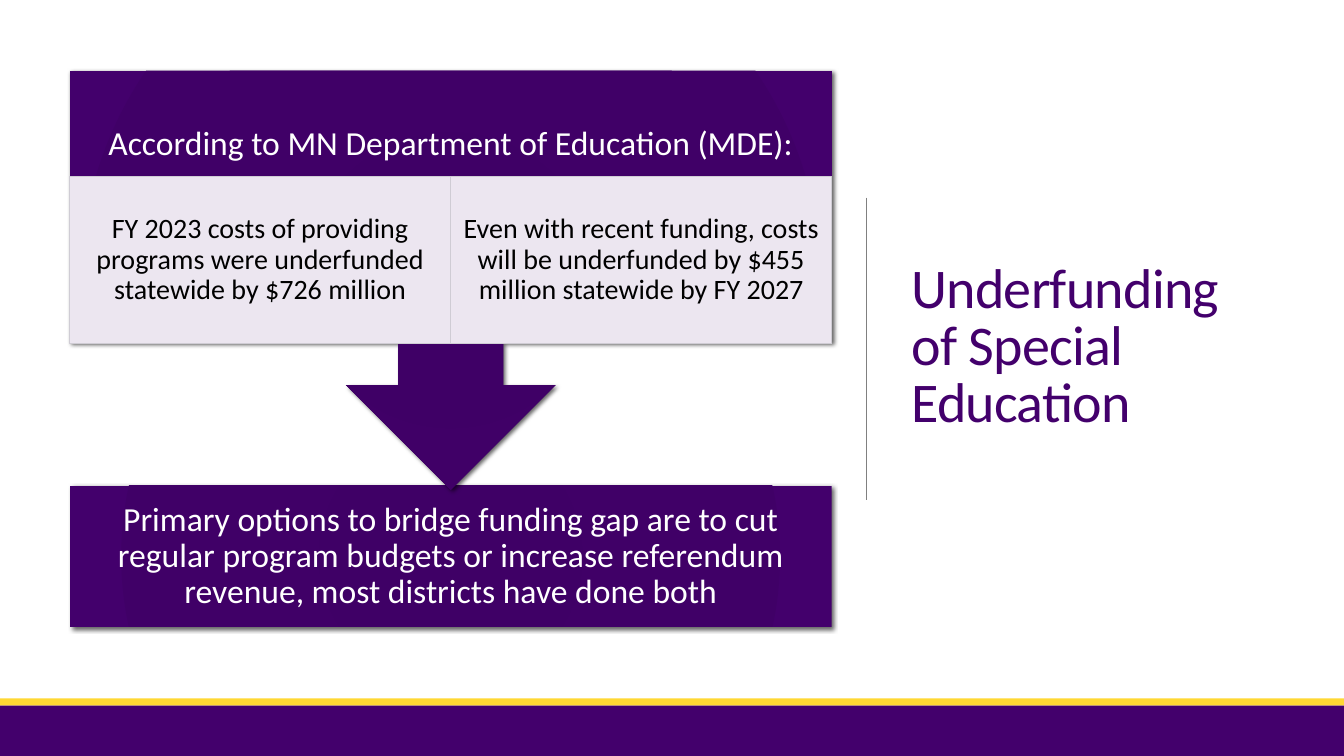
from dataclasses import dataclass

from pptx import Presentation
from pptx.dml.color import RGBColor
from pptx.enum.shapes import MSO_CONNECTOR as Connector, MSO_SHAPE as Preset
from pptx.enum.text import MSO_ANCHOR as Anchor, PP_ALIGN as Align
from pptx.oxml import parse_xml
from pptx.oxml.ns import nsdecls, qn
from pptx.util import Inches, Pt


@dataclass(frozen=True)
class Theme:
    font: str = "Calibri"
    purple: str = "43006C"
    gold: str = "FFD833"
    white: str = "FFFFFF"
    black: str = "000000"
    rule: str = "808080"
    panel_line: str = "CFCCD4"
    shades: tuple = ((0, "3E0065"), (34, "3F0066"), (70, "400067"), (100, "43006C"))
    title_size: int = 40
    heading_size: int = 24
    detail_size: int = 20


THEME = Theme()


def colour(code):
    return RGBColor.from_string(code)


def add_block(page, box, fill, preset=Preset.RECTANGLE):
    block = page.shapes.add_shape(preset, *map(Inches, box))
    block.shadow.inherit = False
    block.fill.solid()
    block.fill.fore_color.rgb = colour(fill)
    block.line.fill.background()
    return block


def add_shaded_block(page, box, preset=Preset.RECTANGLE):
    block = add_block(page, box, THEME.purple, preset)
    properties = block.element.spPr
    stops = "".join(
        f'<a:gs pos="{place * 1000}"><a:srgbClr val="{code}"/></a:gs>'
        for place, code in THEME.shades
    )
    gradient = parse_xml(
        f'<a:gradFill {nsdecls("a")}><a:gsLst>{stops}</a:gsLst><a:path path="circle">'
        '<a:fillToRect l="100000" t="100000" r="100000" b="100000"/></a:path></a:gradFill>'
    )
    properties.replace(properties.find(qn("a:solidFill")), gradient)
    shadow = parse_xml(
        f'<a:outerShdw {nsdecls("a")} blurRad="{Pt(3)}" dist="{Pt(2)}" dir="2700000" '
        f'rotWithShape="0"><a:srgbClr val="{THEME.black}"><a:alpha val="60000"/>'
        "</a:srgbClr></a:outerShdw>"
    )
    properties.find(qn("a:effectLst")).append(shadow)
    return block


def write(shape, text, *, size, color, align=Align.CENTER, spacing=0.9,
          inset=(0.1, 0.05), tracking=None):
    frame = shape.text_frame
    frame.word_wrap = True
    frame.vertical_anchor = Anchor.MIDDLE
    frame.margin_left = frame.margin_right = Inches(inset[0])
    frame.margin_top = frame.margin_bottom = Inches(inset[1])
    para = frame.paragraphs[0]
    para.alignment = align
    para.line_spacing = spacing
    span = para.add_run()
    span.text = text
    span.font.name = THEME.font
    span.font.size = Pt(size)
    span.font.color.rgb = colour(color)
    if tracking is not None:
        span.font._element.set("spc", str(int(tracking * 100)))


def add_title(page, box):
    left, top, width, height = box
    title = page.shapes.add_textbox(*map(Inches, box))
    write(title, "Underfunding of Special Education", size=THEME.title_size,
          color=THEME.purple, align=Align.LEFT, spacing=0.85, tracking=-0.5)
    rule_x = left - 0.35
    rule_top = top + 1.27
    rule = page.shapes.add_connector(
        Connector.STRAIGHT, *map(Inches, (rule_x, rule_top, rule_x, rule_top + 3)))
    rule.line.color.rgb = colour(THEME.rule)
    rule.line.width = Pt(0.5)
    rule.element.spPr.append(parse_xml(f'<a:effectLst {nsdecls("a")}/>'))


def add_footer(page, box):
    left, top, width, height = box
    stripe = 0.07
    add_block(page, (left, top, width, stripe), THEME.gold)
    add_block(page, (left, top + stripe, width, height - stripe), THEME.purple)


def add_panel(page, box, text, inset):
    panel = add_block(page, box, THEME.white)
    fill_color = panel.element.spPr.find(qn("a:solidFill"))[0]
    fill_color.append(parse_xml(f'<a:alpha {nsdecls("a")} val="90000"/>'))
    panel.line.color.rgb = colour(THEME.panel_line)
    panel.line.width = Pt(1)
    write(panel, text, size=THEME.detail_size, color=THEME.black, inset=inset)


def add_findings(page, box):
    left, top, width, height = box
    callout = add_shaded_block(page, box, Preset.UP_ARROW_CALLOUT)
    callout.rotation = 180
    heading = page.shapes.add_textbox(*map(Inches, (left, top, width, 1.46)))
    write(heading, "According to MN Department of Education (MDE):",
          size=THEME.heading_size, color=THEME.white, inset=(0.19, 0.19))
    panels = (
        ("FY 2023 costs of providing programs were underfunded statewide by $726 million",
         (0.16, 0.03)),
        ("Even with recent funding, costs will be underfunded by $455 million "
         "statewide by FY 2027", (0.1, 0.02)),
    )
    panel_width = width / len(panels)
    for index, (text, inset) in enumerate(panels):
        panel_box = (left + index * panel_width, top + 1.05, panel_width, 1.66)
        add_panel(page, panel_box, text, inset)


def add_outcome(page, box):
    outcome = add_shaded_block(page, box)
    write(outcome, "Primary options to bridge funding gap are to cut regular program "
          "budgets or increase referendum revenue, most districts have done both",
          size=THEME.heading_size, color=THEME.white, inset=(0.19, 0.19))


def main():
    deck = Presentation()
    deck.slide_width = Inches(13.33)
    deck.slide_height = Inches(7.5)
    page = deck.slides.add_slide(deck.slide_layouts[6])
    add_title(page, (8.94, 0.69, 3.69, 5.53))
    add_footer(page, (0, 6.93, 13.33, 0.57))
    add_outcome(page, (0.69, 4.82, 7.56, 1.4))
    add_findings(page, (0.69, 0.7, 7.56, 4.16))
    deck.save("out.pptx")


if __name__ == "__main__":
    main()
